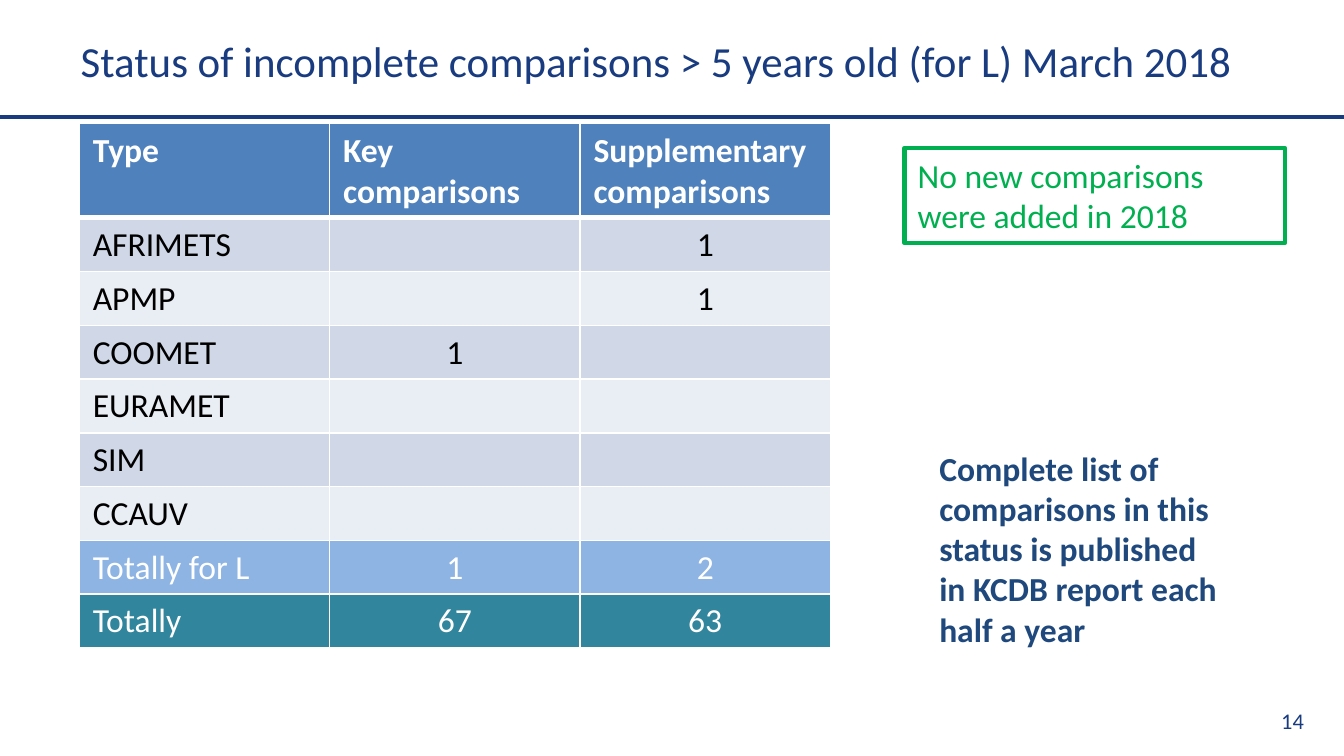
import dataclasses
import typing

import lxml.etree
import pptx
import pptx.dml.color
import pptx.enum.shapes
import pptx.enum.text
import pptx.oxml
import pptx.oxml.ns
import pptx.util

Inches = pptx.util.Inches
Pt = pptx.util.Pt
Align = pptx.enum.text.PP_ALIGN
Anchor = pptx.enum.text.MSO_ANCHOR

HUES = {
    "navy": "193B7F", "blue": "1F497D", "green": "00B050",
    "white": "FFFFFF", "black": "000000", "head": "4F81BD",
    "odd": "D0D8E8", "even": "E9EDF4", "part": "8EB4E3", "total": "31859C",
}
WIDE = 10
TALL = WIDE * 9 / 16
COLS, GRID_W, HEAD_H, ROW_H = 3, 5.59, 0.7, 0.4


@dataclasses.dataclass
class Row:
    cells: tuple[str, str, str]
    fill: str
    ink: str = "black"
    bold: bool = False


@dataclasses.dataclass
class Note:
    text: str
    box: tuple[float, float, float, float]
    ink: str
    size: float = 18
    bold: bool = False
    align: Align = Align.LEFT
    anchor: Anchor = Anchor.TOP
    edge: bool = False


BODIES = [
    ("AFRIMETS", "", "1"), ("APMP", "", "1"), ("COOMET", "1", ""),
    ("EURAMET", "", ""), ("SIM", "", ""), ("CCAUV", "", ""),
]
ROWS = [
    Row(("Type", "Key comparisons", "Supplementary\ncomparisons"), "head", "white", True),
    *(Row(body, ("odd", "even")[i % 2]) for i, body in enumerate(BODIES)),
    Row(("Totally for L", "1", "2"), "part", "white"),
    Row(("Totally", "67", "63"), "total", "white"),
]
NOTES = [
    Note("14", (7.91, 5.21, 1.89, 0.3), "navy", 12, align=Align.RIGHT, anchor=Anchor.MIDDLE),
    Note("Complete list of comparisons in this status is published in KCDB report each half a year",
         (6.89, 3.28, 2.28, 1.62), "blue", bold=True),
    Note("No new comparisons were added in 2018", (6.73, 1.1, 2.83, 0.71), "green", edge=True),
]


def rgb(name: str) -> pptx.dml.color.RGBColor:
    return pptx.dml.color.RGBColor.from_string(HUES[name])


def write(frame: typing.Any, text: str, ink: str, size: float = 18,
          bold: bool = False, align: Align = Align.LEFT) -> None:
    frame.text = text
    style = {"name": "Calibri", "size": Pt(size), "bold": bold}
    for para in frame.paragraphs:
        para.alignment = align
        for key, value in style.items():
            setattr(para.font, key, value)
        para.font.color.rgb = rgb(ink)


def place(shape: typing.Any, box: tuple[float, float, float, float]) -> None:
    for key, value in zip(("left", "top", "width", "height"), box):
        setattr(shape, key, Inches(value))


def add_title(slide: typing.Any) -> None:
    title = slide.shapes.title
    place(title, (0.5, 0.03, 9.07, 0.84))
    write(title.text_frame, "Status of incomplete comparisons > 5 years old (for L) March 2018",
          "navy", 23)
    title.text_frame.auto_size = pptx.enum.text.MSO_AUTO_SIZE.NONE
    title.text_frame.vertical_anchor = Anchor.MIDDLE


def add_rule(slide: typing.Any) -> None:
    rule = slide.shapes.add_connector(
        pptx.enum.shapes.MSO_CONNECTOR.STRAIGHT,
        Inches(0), Inches(0.87), Inches(WIDE), Inches(0.87))
    rule.line.color.rgb = rgb("navy")
    rule.line.width = Pt(2.25)
    lxml.etree.SubElement(rule.element.spPr, pptx.oxml.ns.qn("a:effectLst"))


def add_note(slide: typing.Any, note: Note) -> None:
    box = [Inches(value) for value in note.box]
    if note.edge:
        shape = slide.shapes.add_shape(pptx.enum.shapes.MSO_SHAPE.RECTANGLE, *box)
        shape.shadow.inherit = False
        shape.fill.background()
        shape.line.color.rgb = rgb(note.ink)
        shape.line.width = Pt(2.25)
    else:
        shape = slide.shapes.add_textbox(*box)
    frame = shape.text_frame
    frame.word_wrap = True
    frame.vertical_anchor = note.anchor
    write(frame, note.text, note.ink, note.size, note.bold, note.align)


def set_edges(cell: typing.Any, widths: dict[str, float]) -> None:
    """Give the cell white borders; they must precede its fill."""
    props = cell._tc.get_or_add_tcPr()
    for i, (side, width) in enumerate(widths.items()):
        edge = pptx.oxml.parse_xml(
            f'<a:{side} {pptx.oxml.ns.nsdecls("a")} w="{Pt(width)}"><a:solidFill>'
            f'<a:srgbClr val="{HUES["white"]}"/></a:solidFill></a:{side}>')
        props.insert(i, edge)


def add_grid(slide: typing.Any) -> None:
    height = HEAD_H + ROW_H * (len(ROWS) - 1)
    table = slide.shapes.add_table(
        len(ROWS), COLS, Inches(0.59), Inches(0.92),
        Inches(GRID_W), Inches(height)).table
    for col in table.columns:
        col.width = Inches(GRID_W / COLS)
    for r, row in enumerate(ROWS):
        table.rows[r].height = Inches(ROW_H if r else HEAD_H)
        for c, text in enumerate(row.cells):
            cell = table.cell(r, c)
            cell.margin_bottom = Inches(0.04)
            align = Align.CENTER if r and c else Align.LEFT
            write(cell.text_frame, text, row.ink, bold=row.bold, align=align)
            cell.fill.solid()
            cell.fill.fore_color.rgb = rgb(row.fill)
            set_edges(cell, {"lnL": 1, "lnR": 1, "lnT": 3 if r == 1 else 1,
                             "lnB": 1 if r else 3})


def main() -> None:
    deck = pptx.Presentation()
    deck.slide_width, deck.slide_height = Inches(WIDE), Inches(TALL)
    slide = deck.slides.add_slide(deck.slide_layouts[5])
    add_rule(slide)
    add_title(slide)
    add_grid(slide)
    for note in NOTES:
        add_note(slide, note)
    deck.save("out.pptx")


if __name__ == "__main__":
    main()
